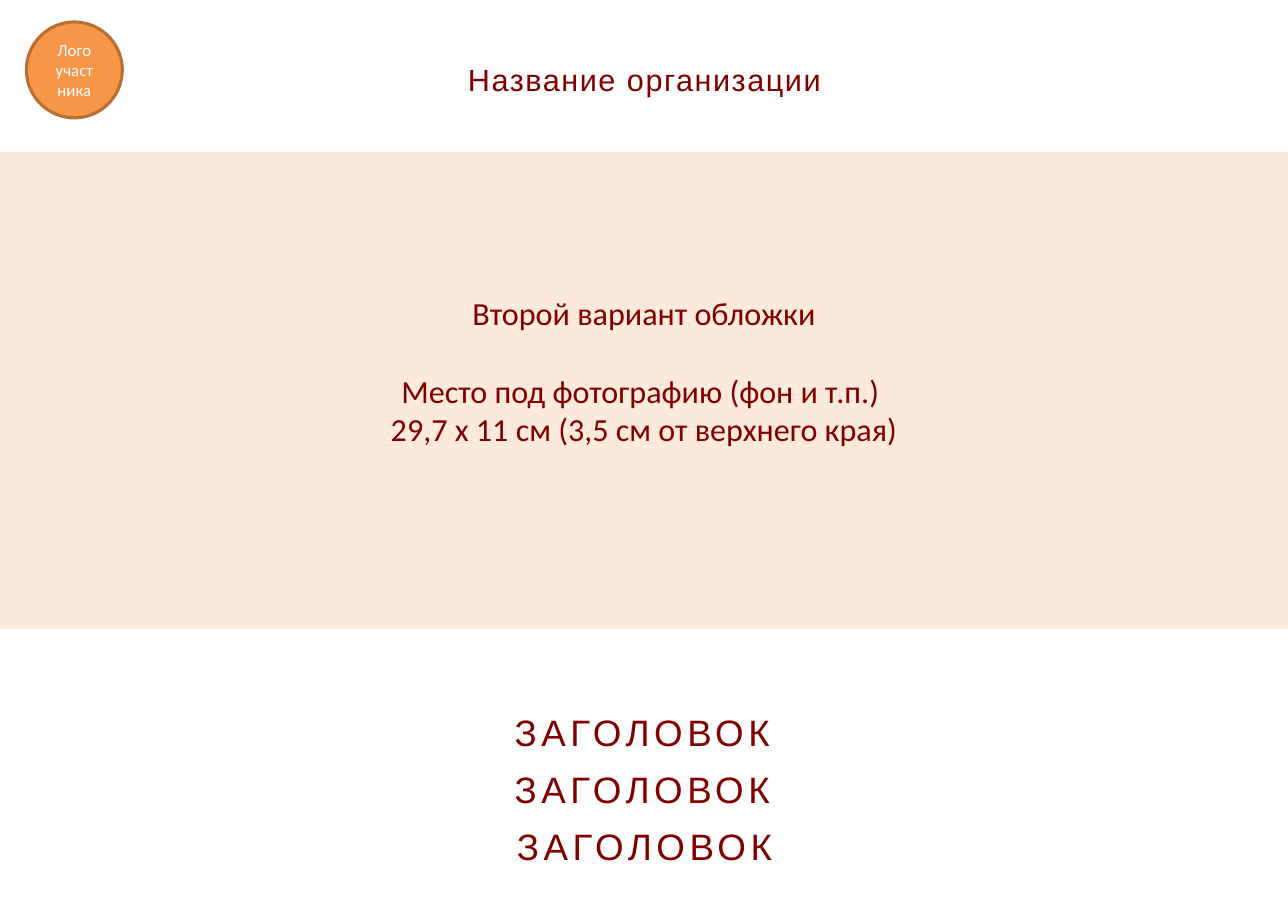
import pptx
import pptx.dml.color
import pptx.enum.shapes
import pptx.enum.text
import pptx.util

RGBColor = pptx.dml.color.RGBColor
Shape = pptx.enum.shapes.MSO_SHAPE
Anchor = pptx.enum.text.MSO_ANCHOR
AutoSize = pptx.enum.text.MSO_AUTO_SIZE
Pt = pptx.util.Pt

MAROON = RGBColor(0x80, 0x00, 0x00)
ORANGE = RGBColor(0xF7, 0x96, 0x46)
DARK_ORANGE = RGBColor(0xB7, 0x6F, 0x34)
PEACH = RGBColor(0xFD, 0xEA, 0xDA)
WHITE = RGBColor(0xFF, 0xFF, 0xFF)

EMU_PER_PX = 9144  # 100 px to the inch
WIDTH, HEIGHT = 1169, 827
TITLE_ONLY_LAYOUT = 5


def px(length):
    return pptx.util.Emu(length * EMU_PER_PX)


class Cover:
    heading_font = "Arial"
    body_font = "Calibri"

    def __init__(self, presentation):
        layout = presentation.slide_layouts[TITLE_ONLY_LAYOUT]
        self.slide = presentation.slides.add_slide(layout)

    def fill_text(self, frame, lines, font_name, size, color):
        """Fill the frame with one centred paragraph per line."""
        for index, line in enumerate(lines):
            paragraph = frame.paragraphs[0] if index == 0 else frame.add_paragraph()
            paragraph.text = line
            paragraph.alignment = pptx.enum.text.PP_ALIGN.CENTER
            paragraph.font.name = font_name
            paragraph.font.size = Pt(size)
            paragraph.font.color.rgb = color

    def spaced_text(self, shape, text, size, tracking):
        """Set letter-spaced text, with tracking in points."""
        frame = shape.text_frame
        self.fill_text(frame, [text], self.heading_font, size, MAROON)
        frame.word_wrap = False
        frame.auto_size = AutoSize.SHAPE_TO_FIT_TEXT
        frame.vertical_anchor = Anchor.TOP
        paragraph = frame.paragraphs[0]
        paragraph.line_spacing = 1.3
        properties = paragraph._p.get_or_add_pPr().get_or_add_defRPr()
        properties.set("spc", str(tracking * 100))

    def title(self, text, left, top, width, height):
        shape = self.slide.shapes.title
        shape.left, shape.top = px(left), px(top)
        shape.width, shape.height = px(width), px(height)
        self.spaced_text(shape, text, size=24, tracking=3)

    def organization(self, text, left, top, width, height):
        box = self.slide.shapes.add_textbox(px(left), px(top), px(width), px(height))
        self.spaced_text(box, text, size=20, tracking=1)

    def panel(self, kind, left, top, width, height, fill, lines, size, color, outline=None):
        shape = self.slide.shapes.add_shape(kind, px(left), px(top), px(width), px(height))
        shape.shadow.inherit = False
        shape.fill.solid()
        shape.fill.fore_color.rgb = fill
        if outline is None:
            shape.line.fill.background()
        else:
            shape.line.color.rgb = outline
            shape.line.width = Pt(2)
        frame = shape.text_frame
        frame.word_wrap = True
        frame.vertical_anchor = Anchor.MIDDLE
        self.fill_text(frame, lines, self.body_font, size, color)
        return frame


def main():
    presentation = pptx.Presentation()
    presentation.slide_width, presentation.slide_height = px(WIDTH), px(HEIGHT)
    cover = Cover(presentation)

    cover.title("\v".join(["ЗАГОЛОВОК"] * 3), 456, 627, 258, 162)
    cover.organization("Название организации", 413, 40, 344, 49)
    cover.panel(Shape.OVAL, 24, 20, 87, 87, ORANGE,
                ["Лого участника"], 11, WHITE, outline=DARK_ORANGE)
    photo_lines = [
        "Второй вариант обложки",
        "Место под фотографию (фон и т.п.) ",
        "29,7 х 11 см (3,5 см от верхнего края)",
    ]
    photo = cover.panel(Shape.RECTANGLE, 0, 138, WIDTH, 433, PEACH,
                        photo_lines, 21, MAROON)
    photo.paragraphs[1].space_before = Pt(25.6)
    photo.margin_bottom = px(41)

    presentation.save("out.pptx")


if __name__ == "__main__":
    main()
